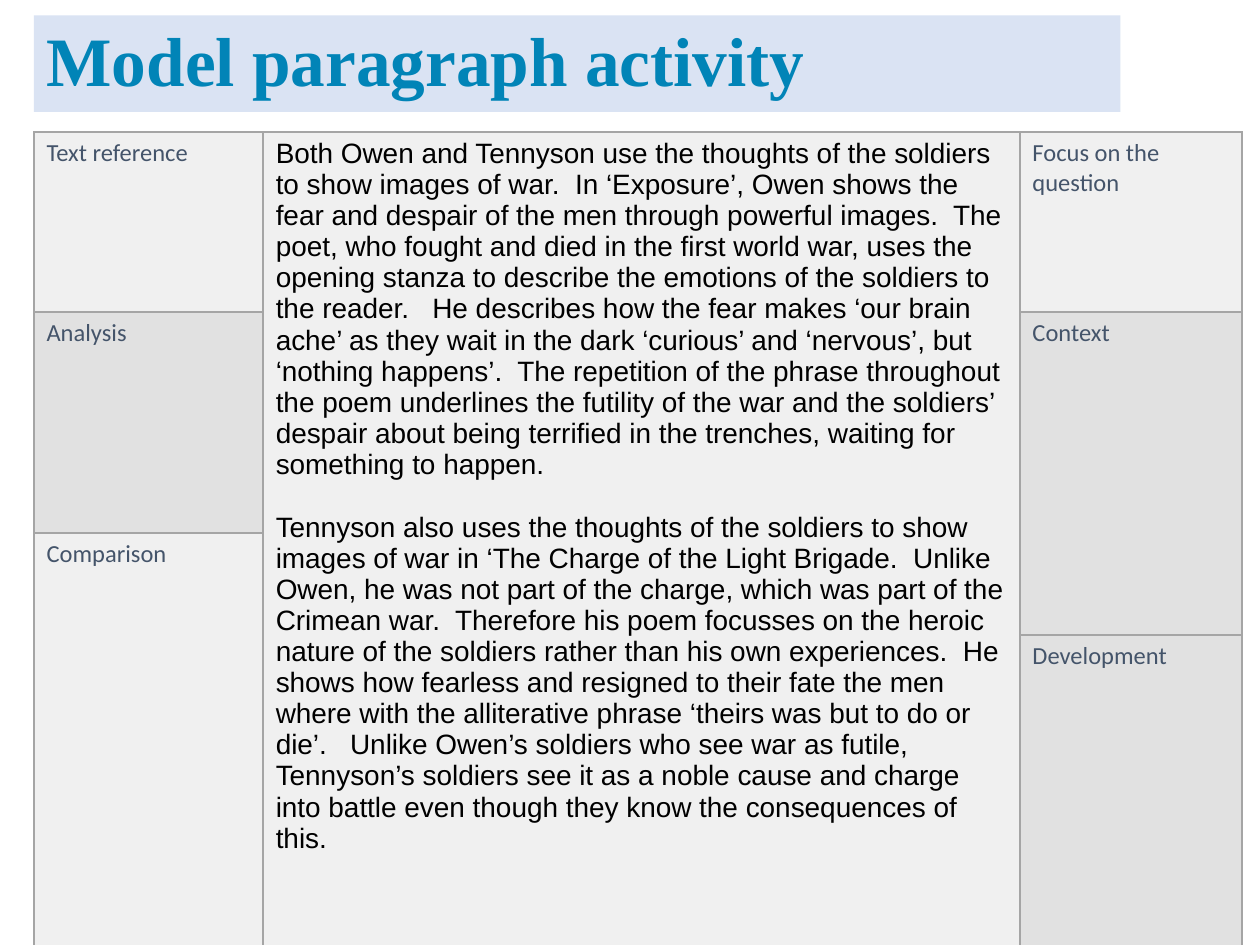
from lxml import etree
from pptx import Presentation
from pptx.dml.color import RGBColor
from pptx.enum.text import MSO_ANCHOR, MSO_AUTO_SIZE, PP_ALIGN
from pptx.oxml.ns import qn
from pptx.util import Pt

LEFT = PP_ALIGN.LEFT
MIDDLE = MSO_ANCHOR.MIDDLE
NO_FIT = MSO_AUTO_SIZE.NONE
COLORS = {"banner": "DAE3F3", "title": "0184B7", "label": "44546A",
          "text": "000000", "light": "F0F0F0", "dark": "E1E1E1",
          "border": "A5A5A5"}

OWEN = (
    "Both Owen and Tennyson use the thoughts of the soldiers to show images of war.  "
    "In ‘Exposure’, Owen shows the fear and despair of the men through powerful images.  "
    "The poet, who fought and died in the first world war, uses the opening stanza to "
    "describe the emotions of the soldiers to the reader.   He describes how the fear "
    "makes ‘our brain ache’ as they wait in the dark ‘curious’ and ‘nervous’, but "
    "‘nothing happens’.  The repetition of the phrase throughout the poem underlines "
    "the futility of the war and the soldiers’ despair about being terrified in the "
    "trenches, waiting for something to happen.")
TENNYSON = (
    "Tennyson also uses the thoughts of the soldiers to show images of war in ‘The "
    "Charge of the Light Brigade.  Unlike Owen, he was not part of the charge, which "
    "was part of the Crimean war.  Therefore his poem focusses on the heroic nature of "
    "the soldiers rather than his own experiences.  He shows how fearless and resigned "
    "to their fate the men where with the alliterative phrase ‘theirs was but to do or "
    "die’.   Unlike Owen’s soldiers who see war as futile, Tennyson’s soldiers see it "
    "as a noble cause and charge into battle even though they know the consequences of "
    "this.")


def add_run(para, text, font, size, color, bold=False):
    run = para.add_run()
    run.text = text
    run.font.name = font
    run.font.size = Pt(size)
    run.font.bold = bold
    run.font.color.rgb = RGBColor.from_string(COLORS[color])


def add_border(cell):
    """Draw a 1 pt line on all four sides of a cell."""
    props = cell._tc.get_or_add_tcPr()
    for i, side in enumerate(("lnL", "lnR", "lnT", "lnB")):
        line = etree.Element(qn(f"a:{side}"), w=str(Pt(1)))
        fill = etree.SubElement(line, qn("a:solidFill"))
        etree.SubElement(fill, qn("a:srgbClr"), val=COLORS["border"])
        props.insert(i, line)


deck = Presentation()
deck.slide_width, deck.slide_height = Pt(720), Pt(540)
slide = deck.slides.add_slide(deck.slide_layouts[5])

# Title banner
title = slide.shapes.title
title.left, title.top, title.width, title.height = Pt(19.4), Pt(8.8), Pt(620.8), Pt(55.2)
title.fill.solid()
title.fill.fore_color.rgb = RGBColor.from_string(COLORS["banner"])
frame = title.text_frame
frame.auto_size = NO_FIT
frame.word_wrap = True
frame.vertical_anchor = MIDDLE
frame.margin_left = frame.margin_right = Pt(7.2)
frame.margin_top = frame.margin_bottom = Pt(7.2)
para = frame.paragraphs[0]
para.alignment = LEFT
para.line_spacing = 0.9
add_run(para, "Model paragraph activity", "Times New Roman", 39.6, "title", True)

# Table: labels on both sides of the model answer
widths = [131, 432.4, 127]
heights = [102.9, 126.4, 58.3, 177]
table = slide.shapes.add_table(
    len(heights), len(widths), Pt(19.4), Pt(75.4),
    Pt(sum(widths)), Pt(sum(heights))).table
table.first_row = table.horz_banding = False
for col, width in zip(table.columns, widths):
    col.width = Pt(width)
for row, height in zip(table.rows, heights):
    row.height = Pt(height)

# First row, last row, column, fill, text
areas = [
    (0, 0, 0, "light", "Text reference"),
    (1, 1, 0, "dark", "Analysis"),
    (2, 3, 0, "light", "Comparison"),
    (0, 3, 1, "light", None),
    (0, 0, 2, "light", "Focus on the question"),
    (1, 2, 2, "dark", "Context"),
    (3, 3, 2, "dark", "Development"),
]
for first, last, col, fill, text in areas:
    for row in range(first, last + 1):
        cell = table.cell(row, col)
        cell.fill.solid()
        cell.fill.fore_color.rgb = RGBColor.from_string(COLORS[fill])
        add_border(cell)
    head = table.cell(first, col)
    if last > first:
        head.merge(table.cell(last, col))
    if text:
        add_run(head.text_frame.paragraphs[0], text, "Calibri", 14, "label")

answer = table.cell(0, 1).text_frame
add_run(answer.paragraphs[0], OWEN, "Arial", 16, "text")
para = answer.add_paragraph()
para.space_before = Pt(18)
add_run(para, TENNYSON, "Arial", 16, "text")

deck.save("out.pptx")
